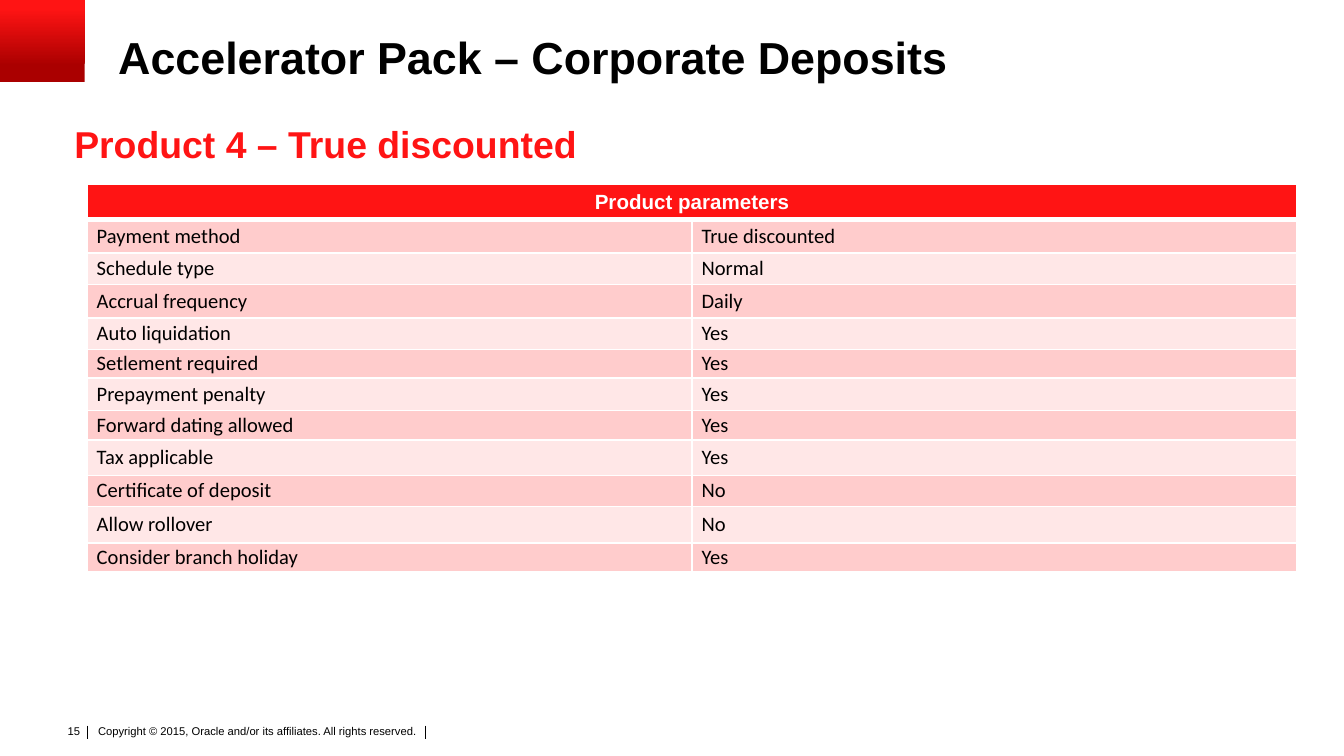
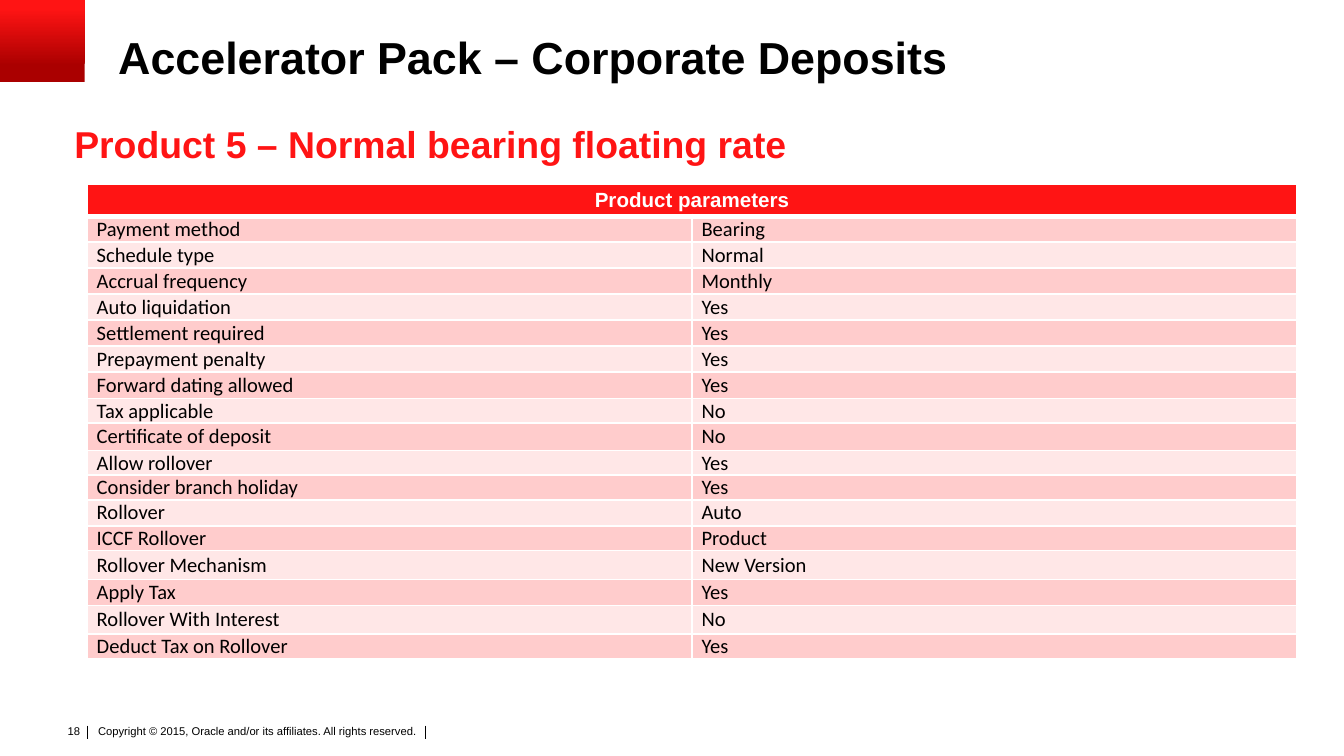
"""Build two product parameter slides for the corporate deposits pack."""
from lxml import etree
from pptx import Presentation
from pptx.dml.color import RGBColor
from pptx.enum.shapes import MSO_CONNECTOR, MSO_SHAPE
from pptx.enum.text import MSO_ANCHOR, PP_ALIGN
from pptx.oxml import parse_xml
from pptx.oxml.ns import nsdecls, qn
from pptx.util import Inches, Pt

LINE, RECT = MSO_CONNECTOR.STRAIGHT, MSO_SHAPE.RECTANGLE
MIDDLE = MSO_ANCHOR.MIDDLE
LEFT, CENTER, RIGHT = PP_ALIGN.LEFT, PP_ALIGN.CENTER, PP_ALIGN.RIGHT

COLORS = {"red": "FF1414", "dark": "AA0000", "odd": "FFCCCC",
          "even": "FFE7E7", "black": "000000", "white": "FFFFFF"}
RGB = {name: RGBColor.from_string(value) for name, value in COLORS.items()}

FORMATS = {
    "title": {"name": "Arial", "size": Pt(24), "bold": True, "color": "black"},
    "subtitle": {"name": "Arial", "size": Pt(20), "bold": True, "color": "red"},
    "footer": {"name": "Arial", "size": Pt(6), "bold": False, "color": "black"},
    "header": {"name": "Arial", "size": Pt(11), "bold": True, "color": "white"},
    "cell": {"name": "Calibri", "size": Pt(11), "bold": False, "color": "black"},
}

TITLE = "Accelerator Pack – Corporate Deposits"
COPYRIGHT = "Copyright © 2015, Oracle and/or its affiliates. All rights reserved."
SLIDES = [
    {"number": "15", "subtitle": "Product 4 – True discounted",
     "heights": [2.6, 2.5, 2.32, 2.52, 2.32, 2.12, 2.42, 2.22, 2.62, 2.32, 2.72, 2.12],
     "rows": [("Payment method", "True discounted"), ("Schedule type", "Normal"),
              ("Accrual frequency", "Daily"), ("Auto liquidation", "Yes"),
              ("Setlement required", "Yes"), ("Prepayment penalty", "Yes"),
              ("Forward dating allowed", "Yes"), ("Tax applicable", "Yes"),
              ("Certificate of deposit", "No"), ("Allow rollover", "No"),
              ("Consider branch holiday", "Yes")]},
    {"number": "18", "subtitle": "Product 5 – Normal bearing floating rate",
     "heights": [2.34] + [1.94] * 7
                + [1.84, 2.04, 1.84, 1.74, 1.94, 1.84, 2.14, 1.94, 2.14, 1.74],
     "rows": [("Payment method", "Bearing"), ("Schedule type", "Normal"),
              ("Accrual frequency", "Monthly"), ("Auto liquidation", "Yes"),
              ("Settlement required", "Yes"), ("Prepayment penalty", "Yes"),
              ("Forward dating allowed", "Yes"), ("Tax applicable", "No"),
              ("Certificate of deposit", "No"), ("Allow rollover", "Yes"),
              ("Consider branch holiday", "Yes"), ("Rollover", "Auto"),
              ("ICCF Rollover", "Product"), ("Rollover Mechanism", "New Version"),
              ("Apply Tax", "Yes"), ("Rollover With Interest", "No"),
              ("Deduct Tax on Rollover", "Yes")]},
]

prs = Presentation()
prs.slide_width = Inches(10)
prs.slide_height = prs.slide_width * 9 // 16
UNIT = prs.slide_width // 100


def grid(*cells):
    """Turn grid cells, a hundredth of the slide width each, into lengths."""
    return [round(c * UNIT) for c in cells]


def write(tf, text, style, align=LEFT):
    """Write one formatted paragraph and return it."""
    p = tf.paragraphs[0]
    p.alignment = align
    r = p.add_run()
    r.text = text
    for key, value in FORMATS[style].items():
        if key == "color":
            r.font.color.rgb = RGB[value]
        else:
            setattr(r.font, key, value)
    return p


for data in SLIDES:
    s = prs.slides.add_slide(prs.slide_layouts[6])

    for x in (6.54, 31.65):
        cx = s.shapes.add_connector(LINE, *grid(x, 54, x, 55))
        cx.line.color.rgb = RGB["black"]
        cx.line.width = Pt(0.5)
        etree.SubElement(cx._element.spPr, qn("a:effectLst"))

    sp = s.shapes.add_shape(RECT, *grid(0, 0, 6.3, 6.1))
    sp.shadow.inherit = False
    sp.line.fill.background()
    sp.fill.gradient()
    sp.fill.gradient_angle = 90
    for stop, color, share in zip(sp.fill.gradient_stops, ("dark", "red"), (0.2, 0.9)):
        stop.color.rgb = RGB[color]
        stop.position = share

    for text, style, box, (mx, my), align, wrap in (
            (COPYRIGHT, "footer", (6.9, 53.7, 27.4, 2.4), (0.4, 0.2), LEFT, True),
            (data["number"], "footer", (3.94, 53.4, 3, 2), (1, 0.5), RIGHT, False),
            (TITLE, "title", (8.8, 2.7, 90, 4.4), (0, 0), LEFT, True),
            (data["subtitle"], "subtitle", (5.53, 9.05, 90, 3.3), (0, 0), LEFT, True)):
        tf = s.shapes.add_textbox(*grid(*box)).text_frame
        tf.word_wrap = wrap
        tf.margin_left, tf.margin_top, tf.margin_right, tf.margin_bottom = grid(mx, my, mx, my)
        p = write(tf, text, style, align)
        if style == "title":
            p.line_spacing = 0.9

    heights = data["heights"]
    table = s.shapes.add_table(len(heights), 2, *grid(6.5, 13.74, 90, sum(heights))).table
    table.first_row = table.horz_banding = False
    for row, height in zip(table.rows, grid(*heights)):
        row.height = height
    for i, values in enumerate([("Product parameters", "")] + data["rows"]):
        for j, text in enumerate(values):
            cell = table.cell(i, j)
            cell.vertical_anchor = MIDDLE
            cell.margin_left, cell.margin_top, cell.margin_right, cell.margin_bottom = grid(0.7, 0, 0.7, 0)
            for side in "LRTB":
                thick = (i, side) in ((0, "B"), (1, "T"))
                cell._tc.get_or_add_tcPr().append(parse_xml(
                    f'<a:ln{side} {nsdecls("a")} w="{Pt(3 if thick else 1)}"><a:solidFill>'
                    f'<a:srgbClr val="{COLORS["white"]}"/></a:solidFill></a:ln{side}>'))
            cell.fill.solid()
            cell.fill.fore_color.rgb = RGB["red" if i == 0 else "odd" if i % 2 else "even"]
            if text:
                p = write(cell.text_frame, text, "cell" if i else "header", LEFT if i else CENTER)
                p.space_after = Pt(10)
    table.cell(0, 0).merge(table.cell(0, 1))

prs.save("out.pptx")
